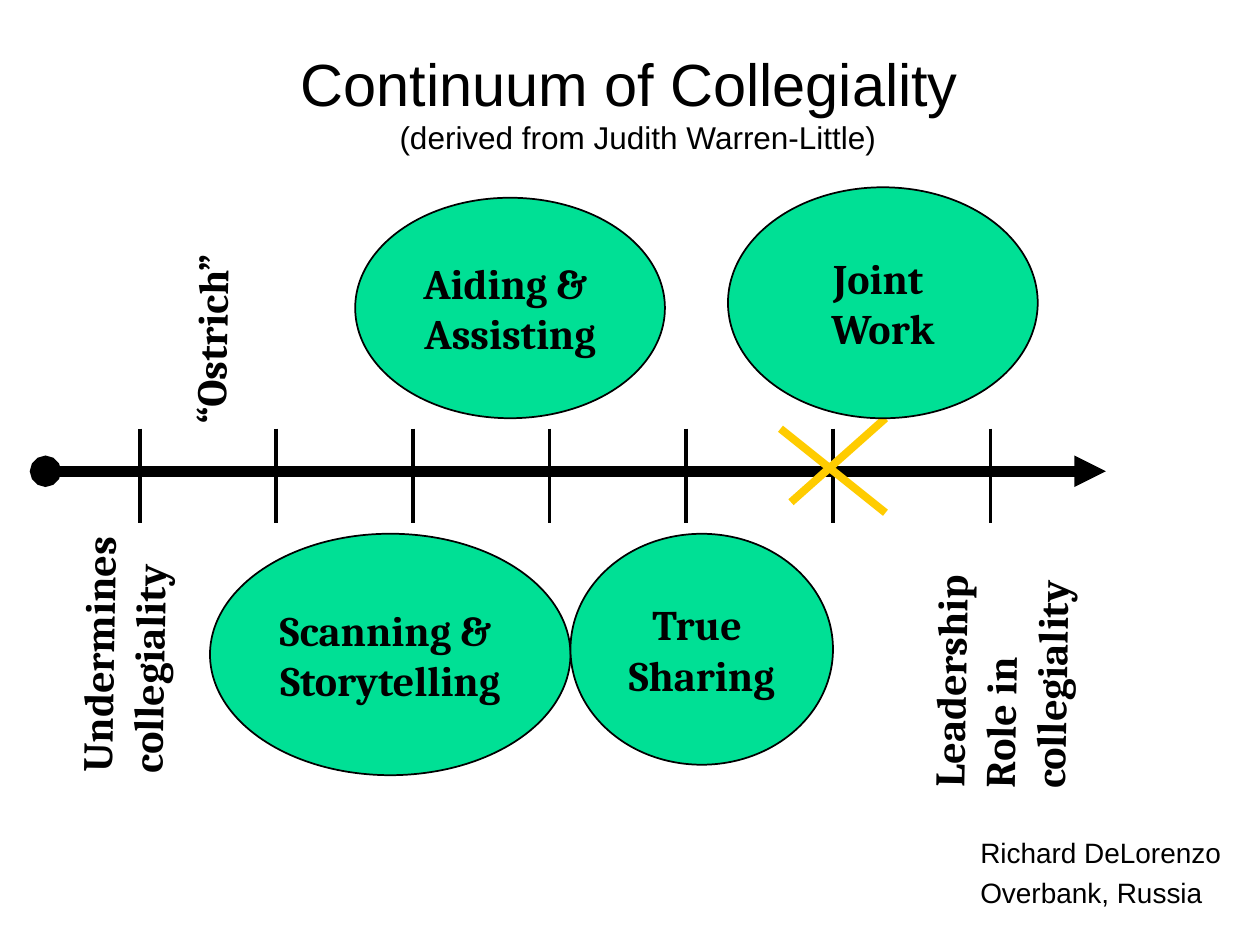
from collections import namedtuple
from dataclasses import dataclass

from lxml.etree import SubElement
from pptx import Presentation
from pptx.dml.color import RGBColor as RGB
from pptx.enum.shapes import MSO_CONNECTOR as LINK, MSO_SHAPE as SHAPE
from pptx.enum.text import MSO_ANCHOR as ANCHOR, MSO_AUTO_SIZE as FIT, PP_ALIGN as ALIGN
from pptx.oxml.ns import qn
from pptx.util import Pt

Box = namedtuple("Box", "x y w h")


@dataclass(frozen=True)
class Theme:
    ink: RGB = RGB(0, 0, 0)
    stage: RGB = RGB(0x00, 0xE0, 0x95)
    mark: RGB = RGB(0xFF, 0xCC, 0x00)
    plain: str = "Arial"
    serif: str = "Cambria"
    title: int = 34
    sub: int = 18
    label: int = 24
    credit: int = 16


THEME = Theme()


def lay(box):
    return [Pt(v) for v in box]


def style(run, name, size, bold=False):
    font = run.font
    font.name, font.size, font.bold = name, Pt(size), bold
    font.color.rgb = THEME.ink


def add_line(slide, start, end, color, width):
    line = slide.shapes.add_connector(LINK.STRAIGHT, *lay((*start, *end)))
    line.line.color.rgb = color
    line.line.width = Pt(width)
    SubElement(line._element.spPr, qn("a:effectLst"))
    return line


def add_title(slide, box, head, sub):
    title = slide.shapes.title
    title.left, title.top, title.width, title.height = lay(box)
    frame = title.text_frame
    frame.text = f"{head} \v{sub}"
    frame.auto_size = FIT.NONE
    frame.vertical_anchor = ANCHOR.MIDDLE
    para = frame.paragraphs[0]
    para.alignment = ALIGN.CENTER
    for run, size in zip(para.runs, (THEME.title, THEME.sub)):
        style(run, THEME.plain, size)


def add_axis(slide, box, ticks):
    """Draw the arrow along the middle of the box, with ticks of its full height."""
    mid = box.y + box.h * 0.45
    axis = add_line(slide, (box.x, mid), (box.x + box.w, mid), THEME.ink, 6)
    ends = axis.line._get_or_add_ln()
    SubElement(ends, qn("a:headEnd"), type="oval")
    SubElement(ends, qn("a:tailEnd"), type="triangle")
    for tick in ticks:
        x = box.x + tick
        add_line(slide, (x, box.y), (x, box.y + box.h), THEME.ink, 2.25)


def add_cross(slide, box):
    right, low = box.x + box.w, box.y + box.h
    add_line(slide, (box.x + 6, low - 6), (right, box.y), THEME.mark, 4.5)
    add_line(slide, (box.x, box.y + 6), (right, low), THEME.mark, 4.5)


def add_stage(slide, box, text):
    oval = slide.shapes.add_shape(SHAPE.OVAL, *lay(box))
    oval.shadow.inherit = False
    oval.fill.solid()
    oval.fill.fore_color.rgb = THEME.stage
    oval.line.color.rgb = THEME.ink
    oval.line.width = Pt(1)
    frame = oval.text_frame
    frame.text = text
    frame.word_wrap = False
    frame.vertical_anchor = ANCHOR.MIDDLE
    for para in frame.paragraphs:
        para.alignment = ALIGN.CENTER
        style(para.runs[0], THEME.serif, THEME.label, True)


def add_label(slide, box, text):
    label = slide.shapes.add_textbox(*lay(box))
    label.rotation = 271
    frame = label.text_frame
    frame.text = text
    frame.word_wrap = True
    frame.auto_size = FIT.SHAPE_TO_FIT_TEXT
    style(frame.paragraphs[0].runs[0], THEME.serif, THEME.label, True)


def add_credit(slide, box, text):
    frame = slide.shapes.add_textbox(*lay(box)).text_frame
    frame.text = text
    frame.word_wrap = True
    frame.margin_left = Pt(9.2)
    for para in frame.paragraphs:
        style(para.runs[0], THEME.plain, THEME.credit)
    for para in frame.paragraphs[1:]:
        para.space_before = Pt(3.6)


def main():
    deck = Presentation()
    deck.slide_width, deck.slide_height = Pt(720), Pt(540)
    slide = deck.slides.add_slide(deck.slide_layouts[5])

    add_title(slide, Box(22.5, 20, 684, 75.6), "Continuum of Collegiality",
              "(derived from Judith Warren-Little)")
    ticks = [54 + 78 * i for i in range(5)] + [450, 540]
    add_axis(slide, Box(26, 245, 606, 54), ticks)
    add_cross(slide, Box(446, 239, 60, 54))

    stages = (
        (Box(120, 305, 206, 138), "Scanning & \nStorytelling"),
        (Box(203, 113, 177, 126), "Aiding & \nAssisting"),
        (Box(326, 305, 150, 132), "True \nSharing"),
        (Box(416, 107, 177, 132), "Joint \nWork"),
    )
    for box, text in stages:
        add_stage(slide, box, text)

    labels = (
        (Box(-16, 322.5, 180, 72), "Undermines collegiality"),
        (Box(34.5, 138, 180, 43), "“Ostrich”"),
        (Box(496, 334, 152, 94.5), "Leadership Role in collegiality"),
    )
    for box, text in labels:
        add_label(slide, box, text)

    add_credit(slide, Box(551, 474, 155, 55), "Richard DeLorenzo\nOverbank, Russia")
    deck.save("out.pptx")


if __name__ == "__main__":
    main()
